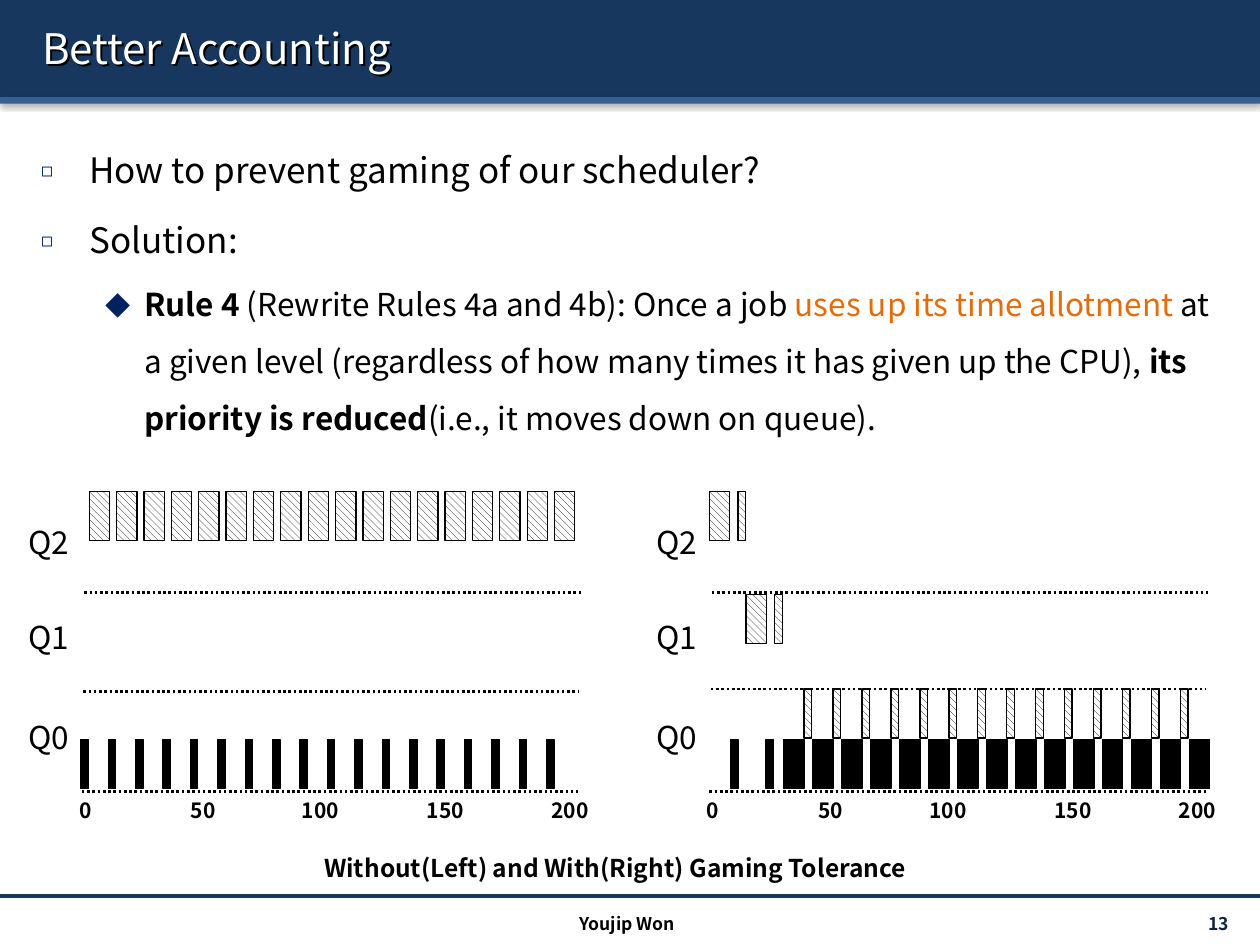
from dataclasses import dataclass
from typing import Any

from lxml.etree import SubElement
from pptx import Presentation
from pptx.dml.color import RGBColor
from pptx.enum.dml import MSO_LINE, MSO_PATTERN
from pptx.enum.shapes import MSO_CONNECTOR, MSO_SHAPE
from pptx.enum.text import MSO_ANCHOR, PP_ALIGN
from pptx.oxml.ns import qn
from pptx.util import Cm, Pt

FONT = "Noto Sans CJK KR"
BLACK, WHITE, NAVY, ORANGE = "000000", "FFFFFF", "17375E", "E46C0A"
WIDE, NARROW, BAR_HEIGHT = 0.41, 0.15, 0.99
Q2_TOP, Q1_TOP, Q0_UPPER, Q0_TOP = 9.91, 11.99, 13.89, 14.91
QUEUES = [("Q2", 10.41), ("Q1", 12.34), ("Q0", 14.35)]
TICKS = [("0", 1.65, 0.61), ("50", 4.1, 1.19), ("100", 6.46, 1.55),
         ("150", 8.98, 1.55), ("200", 11.49, 1.55)]


@dataclass
class BarRow:
    """Evenly spaced bars of one job, from the first left edge to the last."""
    first: float
    last: float
    count: int
    top: float
    width: float
    hatched: bool


@dataclass
class Panel:
    """One scheduling timeline with its offset, middle divider and bars."""
    left: float
    middle: float
    rows: list[BarRow]


@dataclass
class Bullet:
    """The look of one bullet level."""
    char: str
    level: int
    margin: float
    hanging: float
    text_size: float
    percent: int


SQUARE = Bullet("◻", 0, 0.97, 0.97, 20, 55)
DIAMOND = Bullet("◆", 1, 2.08, 0.79, 18, 80)

BODY = [
    (SQUARE, [("How to prevent gaming of our scheduler?", {})]),
    (SQUARE, [("Solution:", {})]),
    (DIAMOND, [
        ("Rule 4 ", {"bold": True}),
        ("(Rewrite Rules 4a and 4b): Once a job ", {}),
        ("uses up its time allotment ", {"color": ORANGE}),
        ("at a given level (regardless of how many times it has given up the CPU), ", {}),
        ("its priority is reduced", {"bold": True}),
        ("(i.e., it moves down on queue).", {}),
    ]),
]

PANELS = [
    Panel(0, 13.94, [
        BarRow(1.63, 11.02, 18, Q0_TOP, NARROW, False),
        BarRow(1.8, 11.18, 18, Q2_TOP, WIDE, True),
    ]),
    Panel(12.65, 13.89, [
        BarRow(14.73, 15.44, 2, Q0_TOP, NARROW, False),
        BarRow(14.3, 14.3, 1, Q2_TOP, WIDE, True),
        BarRow(14.88, 14.88, 1, Q2_TOP, NARROW, True),
        BarRow(15.04, 15.04, 1, Q1_TOP, WIDE, True),
        BarRow(15.62, 15.62, 1, Q1_TOP, NARROW, True),
        BarRow(16.21, 23.8, 14, Q0_UPPER, NARROW, True),
        BarRow(15.8, 23.98, 15, Q0_TOP, WIDE, False),
    ]),
]


def rgb(color: str) -> RGBColor:
    """Turn a hex string into a colour."""
    return RGBColor.from_string(color)


def add_shadow(parent: Any, blur: float, dist: float, angle: int, alpha: int) -> None:
    """Append a black outer shadow to an effect list."""
    shadow = SubElement(parent, qn("a:outerShdw"), blurRad=str(Pt(blur)), dist=str(Pt(dist)),
                        dir=str(angle * 60000), algn="tl", rotWithShape="0")
    clr = SubElement(shadow, qn("a:srgbClr"), val=BLACK)
    SubElement(clr, qn("a:alpha"), val=str(alpha * 1000))


def add_run(p: Any, text: str, *, size: float, color: str = BLACK, bold: bool = False) -> None:
    """Add formatted text to a paragraph."""
    r = p.add_run()
    r.text = text
    r.font.name, r.font.size, r.font.bold = FONT, Pt(size), bold
    r.font.color.rgb = rgb(color)


def add_box(shapes: Any, left: float, top: float, width: float, height: float,
            *, wrap: bool = True, anchor: MSO_ANCHOR = MSO_ANCHOR.TOP) -> Any:
    """Add an empty text box."""
    sp = shapes.add_textbox(Cm(left), Cm(top), Cm(width), Cm(height))
    sp.text_frame.word_wrap, sp.text_frame.vertical_anchor = wrap, anchor
    return sp


def add_label(sp: Any, text: str, align: PP_ALIGN, **fmt: Any) -> None:
    """Fill a text box with one aligned line."""
    p = sp.text_frame.paragraphs[0]
    p.alignment = align
    add_run(p, text, **fmt)


def add_rect(shapes: Any, left: float, top: float, width: float, height: float,
             *, fill: str = BLACK, hatched: bool = False, outline: bool = True) -> Any:
    """Add a plain or hatched rectangle."""
    sp = shapes.add_shape(MSO_SHAPE.RECTANGLE, Cm(left), Cm(top), Cm(width), Cm(height))
    sp.shadow.inherit = False
    if hatched:
        sp.fill.patterned()
        sp.fill.pattern = MSO_PATTERN.WIDE_DOWNWARD_DIAGONAL
        sp.fill.fore_color.rgb, sp.fill.back_color.rgb = rgb(BLACK), rgb(WHITE)
    else:
        sp.fill.solid()
        sp.fill.fore_color.rgb = rgb(fill)
    if outline:
        sp.line.color.rgb, sp.line.width = rgb(BLACK), Pt(0.75)
    else:
        sp.line.fill.background()
    return sp


def add_rule(shapes: Any, left: float, right: float, y: float, *, color: str = BLACK,
             width: float = 1.5, dotted: bool = True) -> None:
    """Add a horizontal line."""
    line = shapes.add_connector(MSO_CONNECTOR.STRAIGHT, Cm(left), Cm(y), Cm(right), Cm(y))
    line.line.color.rgb, line.line.width = rgb(color), Pt(width)
    if dotted:
        line.line.dash_style = MSO_LINE.ROUND_DOT
    SubElement(line._element.spPr, qn("a:effectLst"))


def add_bullet(p: Any, bullet: Bullet) -> None:
    """Give a paragraph its bullet, indent and line spacing."""
    p.level = bullet.level
    pPr = p._p.get_or_add_pPr()
    pPr.set("marL", str(Cm(bullet.margin)))
    pPr.set("indent", str(-Cm(bullet.hanging)))
    clr = SubElement(pPr, qn("a:buClr"))
    SubElement(clr, qn("a:srgbClr"), val="002060")
    SubElement(pPr, qn("a:buSzPct"), val=str(bullet.percent * 1000))
    SubElement(pPr, qn("a:buFont"), typeface=FONT)
    SubElement(pPr, qn("a:buChar"), char=bullet.char)
    p.line_spacing = 1.5


def draw_body(shapes: Any) -> None:
    """Draw the bulleted text."""
    tf = add_box(shapes, 0.58, 2.44, 24.41, 15.29).text_frame
    for i, (bullet, runs) in enumerate(BODY):
        p = tf.add_paragraph() if i else tf.paragraphs[0]
        add_bullet(p, bullet)
        if i:
            p.space_before = Pt(bullet.text_size * 0.2)
        for text, fmt in runs:
            add_run(p, text, size=bullet.text_size, **fmt)


def draw_panel(shapes: Any, panel: Panel) -> None:
    """Draw one timeline as a group."""
    group = shapes.add_group_shape().shapes
    for left, right, y in [(1.7, 11.71, 11.94), (1.68, 11.66, panel.middle), (1.65, 11.66, 15.95)]:
        add_rule(group, panel.left + left, panel.left + right, y)
    for text, center, width in TICKS:
        sp = add_box(group, panel.left + center - width / 2, 15.95, width, 0.76, wrap=False)
        add_label(sp, text, PP_ALIGN.CENTER, size=12, bold=True)
    for text, top in QUEUES:
        add_label(add_box(group, panel.left - 0.1, top, 1.75, 1.02), text, PP_ALIGN.RIGHT, size=18)
    for row in panel.rows:
        pitch = (row.last - row.first) / max(row.count - 1, 1)
        for i in range(row.count):
            add_rect(group, row.first + i * pitch, row.top, row.width, BAR_HEIGHT,
                     hatched=row.hatched)


def draw_frame(shapes: Any) -> None:
    """Draw the header, title and footer."""
    for top, height, color in [(0, 1.96, NAVY), (1.96, 0.13, "376092")]:
        sp = add_rect(shapes, 0, top, 25.4, height, fill=color, outline=False)
        add_shadow(sp._element.spPr.find(qn("a:effectLst")), 3.1, 1.6, 90, 38)
    add_rule(shapes, 0, 25.4, 18.06, color=NAVY, width=2, dotted=False)
    sp = add_box(shapes, 0.6, 0.15, 24.41, 1.63, anchor=MSO_ANCHOR.MIDDLE)
    add_label(sp, "Better Accounting", PP_ALIGN.LEFT, size=24, color=WHITE)
    add_shadow(SubElement(sp._element.spPr, qn("a:effectLst")), 0, 1.6, 45, 100)
    sp = add_box(shapes, 22.05, 18.31, 2.97, 0.61, anchor=MSO_ANCHOR.MIDDLE)
    add_label(sp, "13", PP_ALIGN.RIGHT, size=10, color="0F243E", bold=True)
    sp = add_box(shapes, 8.43, 18.29, 8.43, 0.61)
    add_label(sp, "Youjip Won", PP_ALIGN.CENTER, size=10, bold=True)


def main() -> None:
    """Build the slide and save it."""
    prs = Presentation()
    prs.slide_width, prs.slide_height = Cm(25.4), Cm(19.05)
    s = prs.slides.add_slide(prs.slide_layouts[6])
    draw_frame(s.shapes)
    draw_body(s.shapes)
    for panel in PANELS:
        draw_panel(s.shapes, panel)
    add_label(add_box(s.shapes, 3.3, 17.07, 18.21, 0.86),
              "Without(Left) and With(Right) Gaming Tolerance", PP_ALIGN.CENTER, size=14, bold=True)
    prs.save("out.pptx")


if __name__ == "__main__":
    main()
